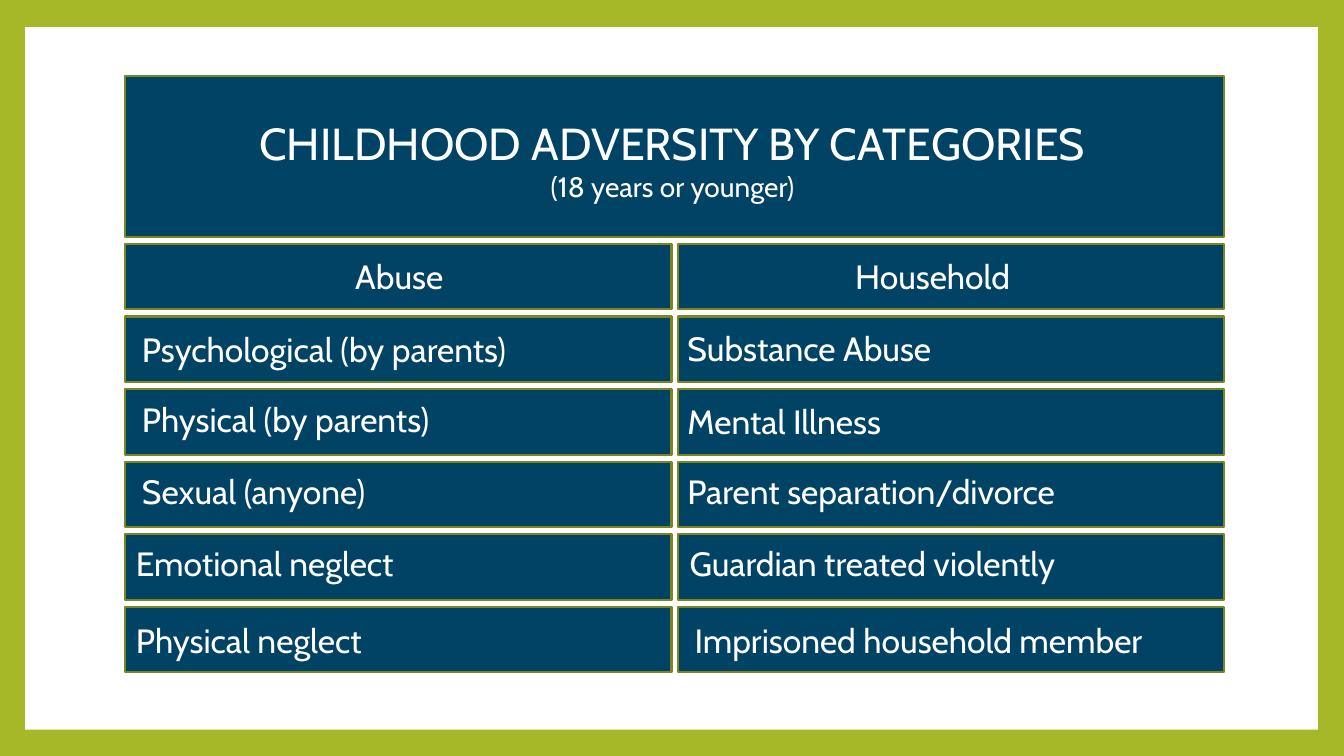
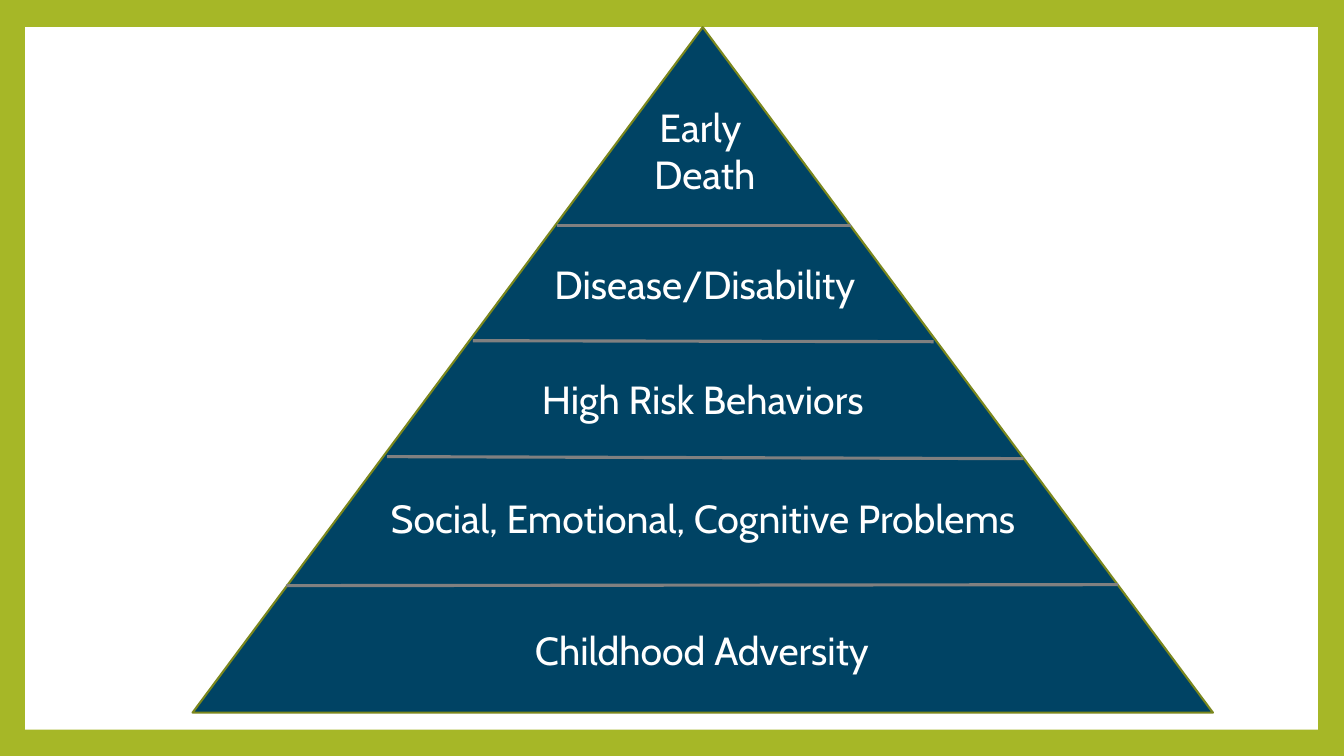
from lxml.etree import SubElement
from pptx import Presentation
from pptx.dml.color import RGBColor
from pptx.enum.shapes import MSO_CONNECTOR, MSO_SHAPE
from pptx.enum.text import MSO_AUTO_SIZE, PP_ALIGN
from pptx.oxml.ns import qn
from pptx.util import Inches, Pt

COLORS = {
    "frame": "A6B727",
    "panel": "FFFFFF",
    "block": "004364",
    "outline": "7B871D",
    "divider": "808080",
    "text": "FFFFFF",
}
FONT = "Cabin"


def color(name):
    return RGBColor.from_string(COLORS[name])


class Deck:
    """Holds the shared style and the slide being built."""

    def __init__(self):
        self.prs = Presentation()
        self.prs.slide_width = Inches(13.33)
        self.prs.slide_height = Inches(7.5)
        backdrop = self.prs.slide_master.background.fill
        backdrop.solid()
        backdrop.fore_color.rgb = color("frame")
        self.slide = None

    def new_slide(self):
        self.slide = self.prs.slides.add_slide(self.prs.slide_layouts[6])
        panel = self.shape(MSO_SHAPE.RECTANGLE, 0.25, 0.27, 12.82, 6.97, "panel")
        panel.line.fill.background()

    def shape(self, preset, left, top, width, height, fill):
        shape = self.slide.shapes.add_shape(
            preset, Inches(left), Inches(top), Inches(width), Inches(height))
        shape.shadow.inherit = False
        shape.fill.solid()
        shape.fill.fore_color.rgb = color(fill)
        return shape

    def block(self, left, top, width, height, preset=MSO_SHAPE.RECTANGLE):
        """Add a dark blue shape with the olive outline."""
        block = self.shape(preset, left, top, width, height, "block")
        block.line.color.rgb = color("outline")
        block.line.width = Pt(1.5)

    def divider(self, x1, y1, x2, y2):
        divider = self.slide.shapes.add_connector(
            MSO_CONNECTOR.STRAIGHT, Inches(x1), Inches(y1), Inches(x2), Inches(y2))
        divider.line.color.rgb = color("divider")
        divider.line.width = Pt(2.25)
        SubElement(divider.element.spPr, qn("a:effectLst"))

    def text(self, lines, left, top, width, height, align=PP_ALIGN.CENTER):
        """Add a text box; lines is a list of (wording, point size)."""
        box = self.slide.shapes.add_textbox(
            Inches(left), Inches(top), Inches(width), Inches(height))
        frame = box.text_frame
        frame.word_wrap = True
        frame.auto_size = MSO_AUTO_SIZE.SHAPE_TO_FIT_TEXT
        for index, (wording, size) in enumerate(lines):
            paragraph = frame.add_paragraph() if index else frame.paragraphs[0]
            paragraph.text = wording
            paragraph.alignment = align
            paragraph.font.name = FONT
            paragraph.font.size = Pt(size)
            paragraph.font.color.rgb = color("text")


def build_categories(deck):
    cell_width, cell_height = 5.42, 0.65
    first_row, row_pitch = 2.42, 0.72
    # Each column: cell left, then (label, label left, label top) per row.
    columns = [
        (1.24, [
            ("Abuse", 1.25, 2.49),
            ("Psychological (by parents)", 1.31, 3.21),
            ("Physical (by parents)", 1.31, 3.91),
            ("Sexual (anyone)", 1.31, 4.62),
            ("Emotional neglect", 1.25, 5.34),
            ("Physical neglect", 1.25, 6.1),
        ]),
        (6.72, [
            ("Household", 6.54, 2.49),
            ("Substance Abuse", 6.72, 3.2),
            ("Mental Illness", 6.72, 3.93),
            ("Parent separation/divorce", 6.72, 4.62),
            ("Guardian treated violently", 6.74, 5.34),
            ("Imprisoned household member", 6.79, 6.1),
        ]),
    ]

    deck.new_slide()
    deck.block(1.24, 0.75, 10.9, 1.6)
    deck.text([("CHILDHOOD ADVERSITY BY CATEGORIES", 32),
               ("(18 years or younger)", 20)], 2.03, 1.1, 9.28, 0.98)
    for cell_left, labels in columns:
        for row, (label, left, top) in enumerate(labels):
            deck.block(cell_left, first_row + row * row_pitch, cell_width, cell_height)
            align = PP_ALIGN.LEFT if row else PP_ALIGN.CENTER
            deck.text([(label, 24)], left, top, cell_width, 0.5, align)


def build_pyramid(deck):
    dividers = [
        (5.52, 2.24, 8.44, 2.24),
        (4.69, 3.38, 9.26, 3.39),
        (3.84, 4.53, 10.15, 4.55),
        (2.84, 5.81, 11.09, 5.8),
    ]
    levels = [
        (["Early ", "Death"], 2.87, 0.98, 1.04),
        (["Disease/Disability"], 2.87, 2.53, 0.57),
        (["High Risk Behaviors"], 2.85, 3.67, 0.57),
        (["Social, Emotional, Cognitive Problems"], 2.85, 4.85, 0.57),
        (["Childhood Adversity"], 2.84, 6.16, 0.57),
    ]

    deck.new_slide()
    deck.block(1.91, 0.27, 10.12, 6.8, MSO_SHAPE.ISOSCELES_TRIANGLE)
    for ends in dividers:
        deck.divider(*ends)
    for lines, left, top, height in levels:
        deck.text([(line, 28) for line in lines], left, top, 8.24, height)


def main():
    deck = Deck()
    build_categories(deck)
    build_pyramid(deck)
    deck.prs.save("out.pptx")


if __name__ == "__main__":
    main()
